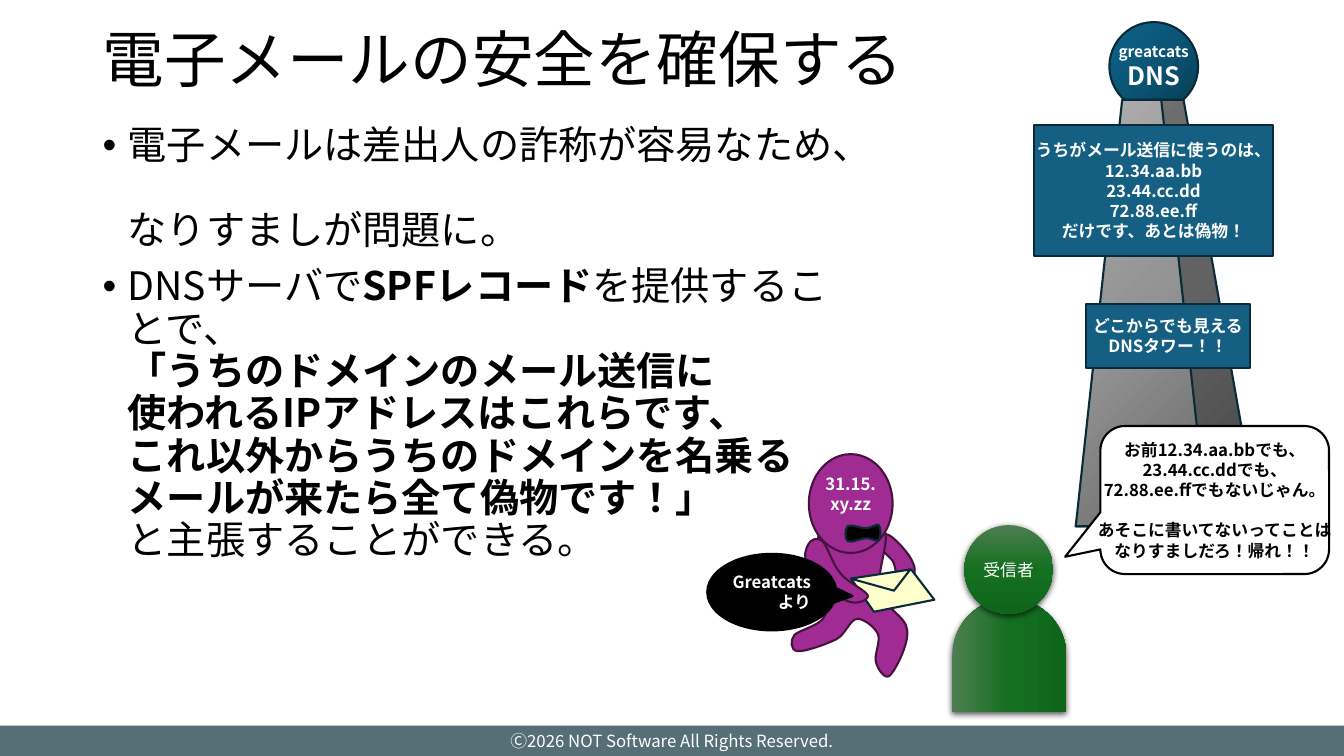
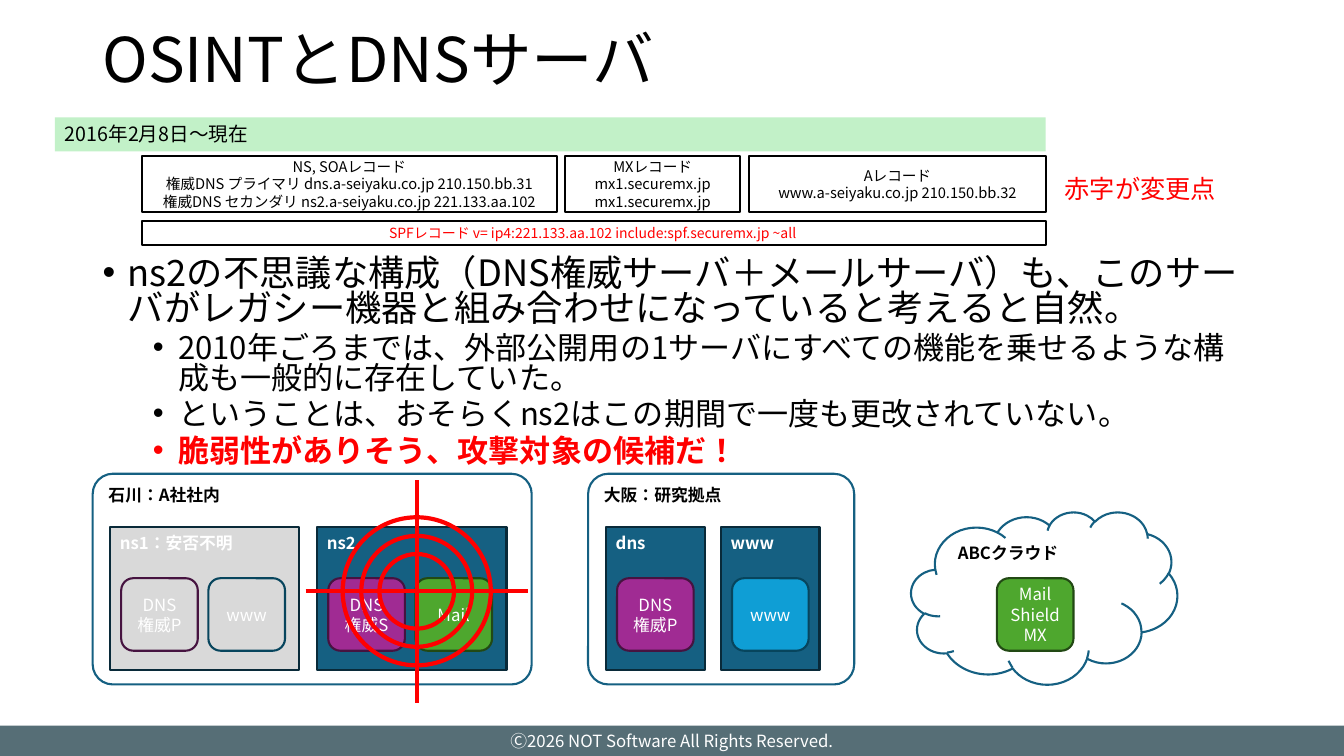
from copy import deepcopy
from dataclasses import dataclass
from lxml.etree import SubElement
from pptx import Presentation
from pptx.dml.color import RGBColor
from pptx.enum.lang import MSO_LANGUAGE_ID
from pptx.enum.shapes import MSO_CONNECTOR, MSO_SHAPE
from pptx.enum.text import MSO_ANCHOR, PP_ALIGN
from pptx.oxml.ns import qn
from pptx.util import Pt


@dataclass(frozen=True)
class Theme:
    font: str = "Noto Sans CJK JP"
    black: str = "000000"
    white: str = "FFFFFF"
    red: str = "FF0000"
    blue: str = "156082"
    navy: str = "092A39"
    purple: str = "A02B93"
    plum: str = "461340"
    green: str = "4EA72E"
    forest: str = "224914"
    sky: str = "0F9ED5"
    teal: str = "07455D"
    gray: str = "D9D9D9"
    cream: str = "FFFFCC"
    mint: str = "C2F1C8"
    band: str = "566E76"
    ball: tuple = (225, "083B52", "0B5474", "0D638A")
    tower_side: tuple = (225, "454545", "626262", "747474")
    tower_front: tuple = (225, "676767", "939393", "AEAEAE")
    receiver: tuple = (90, "4D7E50", "156F21", "0F661B")
    title: float = 44
    body: float = 28
    dense_body: tuple = (25.9, 22.2)
    note: float = 18
    period: float = 14
    label: float = 12
    small: float = 11
    record: float = 10.5
    spf: float = 10
    line: float = 1.5
    thick: float = 3


T = Theme()
LEFT, CENTER, RIGHT = PP_ALIGN.LEFT, PP_ALIGN.CENTER, PP_ALIGN.RIGHT
TOP, MIDDLE = MSO_ANCHOR.TOP, MSO_ANCHOR.MIDDLE
FOOTER = "Ⓒ2026 NOT Software All Rights Reserved."

MAIL_TITLE = "電子メールの安全を確保する"
MAIL_BODY = [
    (0, [("電子メールは差出人の詐称が容易なため、\nなりすましが問題に。", False, T.black)]),
    (0, [("DNSサーバで", False, T.black), ("SPFレコード", True, T.black),
         ("を提供することで、\n", False, T.black),
         ("「うちのドメインのメール送信に\n使われるIPアドレスはこれらです、\n"
          "これ以外からうちのドメインを名乗る\nメールが来たら全て偽物です！」\n", True, T.black),
         ("と主張することができる。", False, T.black)]),
]
TOWER_SIGNS = [
    ((738.7, 89.3, 170.6, 93.6),
     ["うちがメール送信に使うのは、", "12.34.aa.bb", "23.44.cc.dd", "72.88.ee.ff", "だけです、あとは偽物！"]),
    ((775.6, 217.4, 117.4, 45.4), ["どこからでも見える", "DNSタワー！！"]),
]
SPEECH = ["お前12.34.aa.bbでも、", "23.44.cc.ddでも、", "72.88.ee.ffでもないじゃん。",
          "あそこに書いてないってことは", "なりすましだろ！帰れ！！"]

FAR_ARM = [
    (635, 382.3), (639.4, 384.5), (650.2, 396), (652.3, 402.5), (655.2, 408.2), (651.6, 415.4),
    (649.4, 416.9), (648, 419), (643, 415.4), (641.5, 412.6), (639.4, 410.4), (640.1, 405.4),
    (637.9, 401), (635, 396.7), (626.4, 391), (625.7, 387.4), (625.7, 384.5), (630, 379.4),
    (635, 382.3)]
TORSO = [
    (585.4, 378), (586.1, 374.4), (586.8, 378), (586.8, 378), (591.1, 377.3), (603.4, 372.2),
    (610.6, 373), (617.8, 373), (629.3, 371.5), (632.2, 380.2), (635, 388.1), (625.7, 410.4),
    (628.6, 421.9), (630.7, 434.2), (647.3, 439.9), (648, 450), (649.4, 460.1), (639.4, 478.8),
    (635.8, 482.4), (632.2, 486), (627.1, 478.1), (625.7, 473), (624.2, 468), (629.3, 457.9),
    (627.1, 452.9), (625, 447.8), (616.3, 441.4), (612, 442.1), (607, 442.8), (604.1, 452.9),
    (597.6, 456.5), (590.4, 460.1), (574.6, 465.8), (569.5, 465.1), (564.5, 464.4), (564.5, 457.2),
    (567.4, 453.6), (571, 450), (584.6, 447.1), (588.2, 441.4), (591.8, 436.3), (590.4, 427),
    (589.7, 419.8), (589, 412.6), (584.6, 406.1), (583.9, 398.9), (583.2, 391.7), (584.6, 381.6),
    (585.4, 378)]
BOW_TIE = [
    (627.8, 375.1), (629.3, 377.3), (629.3, 384.5), (627.8, 385.9), (625.7, 387.4), (622.1, 383.8),
    (618.5, 384.5), (614.9, 384.5), (607.7, 388.1), (605.5, 386.6), (603.4, 385.2), (603.4, 378),
    (605.5, 375.8), (607.7, 374.4), (614.9, 377.3), (618.5, 377.3), (622.8, 377.3), (626.4, 373.7),
    (627.8, 375.1)]
NEAR_ARM = [
    (577.4, 388.8), (578.9, 385.9), (583.2, 383), (587.5, 386.6), (591.1, 390.2), (594.7, 403.2),
    (600.5, 409.7), (605.5, 416.2), (619.2, 421.9), (619.9, 425.5), (620.6, 428.4), (612, 432.7),
    (604.8, 429.1), (597.6, 425.5), (582.5, 410.4), (577.4, 403.9), (573.1, 396.7), (576, 391.7),
    (577.4, 388.8)]
ENVELOPE = [(608.4, 414), (650.9, 406.8), (667.4, 428.4), (624.2, 437)]
FLAP = [(607.7, 413.3), (650.2, 406.8), (638.6, 421.9)]

OSINT_TITLE = "OSINTとDNSサーバ"
OSINT_BODY = [
    (0, [("ns2の不思議な構成（DNS権威サーバ＋メールサーバ）も、このサーバがレガシー機器と"
          "組み合わせになっていると考えると自然。", False, T.black)]),
    (1, [("2010年ごろまでは、外部公開用の1サーバにすべての機能を乗せるような構成も"
          "一般的に存在していた。", False, T.black)]),
    (1, [("ということは、おそらくns2はこの期間で一度も更改されていない。", False, T.black)]),
    (1, [("脆弱性がありそう、攻撃対象の候補だ！", True, T.red)]),
]
RECORDS = [
    (296.1, ["NS, SOAレコード", "権威DNS プライマリ dns.a-seiyaku.co.jp 210.150.bb.31",
             "権威DNS セカンダリ ns2.a-seiyaku.co.jp 221.133.aa.102"]),
    (125.3, ["MXレコード", "mx1.securemx.jp", "mx1.securemx.jp"]),
    (212.4, ["Aレコード", "www.a-seiyaku.co.jp 210.150.bb.32"]),
]
SPF = "SPFレコード v= ip4:221.133.aa.102 include:spf.securemx.jp ~all "
SITES = [(66.2, 313.6, "石川：A社社内"), (420.1, 190.1, "大阪：研究拠点")]
SERVERS = [
    (78.5, "ns1：安否不明", T.gray, [(["DNS", "権威P"], T.gray, T.plum), (["www"], T.gray, T.teal)]),
    (226.4, "ns2", T.blue, [(["DNS", "権威S"], T.purple, T.plum), (["Mail"], T.green, T.forest)]),
    (432.7, "dns", T.blue, [(["DNS", "権威P"], T.purple, T.plum)]),
    (514.8, "www", T.blue, [(["www"], T.sky, T.teal)]),
]
TARGET = (297.7, 422.4)
RING_SIZES = (105.8, 79.2, 53.3)
CROSS_ARM = 79.4


def rgb(value):
    return RGBColor.from_string(value)


def add_run(p, text, size, color, bold=False):
    r = p.add_run()
    r.text = text
    f = r.font
    f.name, f.size, f.bold = T.font, Pt(size), bold
    f.color.rgb = rgb(color)
    f.language_id = MSO_LANGUAGE_ID.JAPANESE
    SubElement(r._r.rPr, qn("a:ea"), typeface=T.font)
    return r


def add_lines(sp, lines, size=T.label, color=T.white, bold=False, align=CENTER, anchor=MIDDLE, wrap=False):
    tf = sp.text_frame
    tf.word_wrap, tf.vertical_anchor = wrap, anchor
    for i, text in enumerate(lines):
        p = tf.paragraphs[0] if i == 0 else tf.add_paragraph()
        p.alignment = align
        add_run(p, text, size, color, bold)
    return tf


def paint(sp, fill=None, line=None, width=T.line):
    sp.shadow.inherit = False
    if isinstance(fill, tuple):
        sp.fill.gradient()
        sp.fill.gradient_angle = 360 - fill[0]
        stops = sp._element.spPr.find(qn("a:gradFill")).find(qn("a:gsLst"))
        for stop in list(stops):
            stops.remove(stop)
        for i, color in enumerate(fill[1:]):
            stop = SubElement(stops, qn("a:gs"), pos=str(i * 50000))
            SubElement(stop, qn("a:srgbClr"), val=color)
    elif fill:
        sp.fill.solid()
        sp.fill.fore_color.rgb = rgb(fill)
    else:
        sp.fill.background()
    if line:
        sp.line.color.rgb = rgb(line)
        sp.line.width = Pt(width)
    else:
        sp.line.fill.background()
    return sp


def add_box(s, kind, box, fill=None, line=None, width=T.line, adj=()):
    sp = s.shapes.add_shape(kind, *map(Pt, box))
    for i, value in enumerate(adj):
        sp.adjustments[i] = value
    return paint(sp, fill, line, width)


def add_outline(s, points, fill, line):
    fb = s.shapes.build_freeform(Pt(points[0][0]), Pt(points[0][1]))
    fb.add_line_segments([(Pt(x), Pt(y)) for x, y in points[1:]], close=points[0] != points[-1])
    return paint(fb.convert_to_shape(), fill, line)


def add_curve(s, points, fill, line):
    sp = add_outline(s, points, fill, line)
    segments = list(sp._element.spPr.iter(qn("a:lnTo")))
    outline = segments[0].getparent()
    for i in range(0, len(segments), 3):
        curve = SubElement(outline, qn("a:cubicBezTo"))
        for segment in segments[i:i + 3]:
            curve.append(segment[0])
            outline.remove(segment)
    SubElement(outline, qn("a:close"))
    return sp


def add_shadow(sp):
    effects = sp._element.spPr.find(qn("a:effectLst"))
    shadow = SubElement(effects, qn("a:outerShdw"), blurRad=str(Pt(4.5)), dist=str(Pt(1.5)),
                        dir="5400000", algn="ctr", rotWithShape="0")
    color = SubElement(shadow, qn("a:srgbClr"), val=T.black)
    SubElement(color, qn("a:alpha"), val="63000")


def add_body(s, box, items, sizes, spacing):
    tf = s.shapes.add_textbox(*map(Pt, box)).text_frame
    tf.word_wrap = True
    for i, (level, runs) in enumerate(items):
        p = tf.paragraphs[0] if i == 0 else tf.add_paragraph()
        pPr = p._p.get_or_add_pPr()
        for name, value in (("marL", Pt(18 + 36 * level)), ("indent", -Pt(18)), ("hangingPunct", 1)):
            pPr.set(name, str(value))
        SubElement(pPr, qn("a:buFont"), typeface="Arial")
        SubElement(pPr, qn("a:buChar"), char="•")
        p.level = level
        p.line_spacing = spacing
        p.space_before = Pt(0 if i == 0 else 5 if level else 10)
        for text, bold, color in runs:
            for n, part in enumerate(text.split("\n")):
                if n:
                    p.add_line_break()
                    p._p[-1].append(deepcopy(r._r.rPr))
                if part:
                    r = add_run(p, part, sizes[level], color, bold)


def new_slide(prs, title):
    s = prs.slides.add_slide(prs.slide_layouts[6])
    add_lines(add_box(s, MSO_SHAPE.RECTANGLE, (0, 518.4, 960, 21.6), T.band), [FOOTER])
    sp = s.shapes.add_textbox(Pt(66.2), Pt(15.8), Pt(828), Pt(57.6))
    tf = add_lines(sp, [title], T.title, T.black, align=LEFT, wrap=True)
    tf.paragraphs[0].line_spacing = 0.9
    return s


def add_impostor(s):
    parts = [add_curve(s, points, T.purple, T.plum) for points in (FAR_ARM, TORSO)]
    head = add_box(s, MSO_SHAPE.OVAL, (577.8, 324.4, 59.8, 70.6), T.purple, T.plum)
    add_lines(head, ["31.15.", "xy.zz"], bold=True).margin_bottom = Pt(18)
    parts += [head, add_curve(s, BOW_TIE, T.black, T.navy)]
    parts += [add_outline(s, points, T.cream, T.navy) for points in (ENVELOPE, FLAP)]
    parts.append(add_curve(s, NEAR_ARM, T.purple, T.plum))
    s.shapes.add_group_shape(parts)


def add_receiver(s):
    body = add_box(s, MSO_SHAPE.FLOWCHART_DELAY, (680.2, 427.4, 81.4, 81.4), T.receiver)
    body.rotation = 270
    head = add_box(s, MSO_SHAPE.OVAL, (688.8, 375.1, 63.4, 63.4), T.receiver)
    add_lines(head, ["受信者"])
    for sp in (body, head):
        add_shadow(sp)
    s.shapes.add_group_shape([body, head])


def build_mail(prs):
    s = new_slide(prs, MAIL_TITLE)
    ball = add_box(s, MSO_SHAPE.OVAL, (792.4, 15.8, 63.4, 63.4), T.ball, T.navy)
    tf = add_lines(ball, ["greatcats", "DNS"], T.small, bold=True)
    tf.paragraphs[1].runs[0].font.size = Pt(T.note)
    tower = [add_box(s, MSO_SHAPE.TRAPEZOID, (768.4, 71.3, 131, 304.6), T.tower_side, T.navy, adj=(0.412,))]
    add_body(s, (66.2, 86.4, 540.7, 400.3), MAIL_BODY, (T.body,), 0.9)
    add_box(s, MSO_SHAPE.TRAPEZOID, (768.4, 71.3, 94.3, 304.6), T.tower_front, T.navy, adj=(0.352,))
    add_impostor(s)
    sign, lines = TOWER_SIGNS[0]
    for sign, lines in TOWER_SIGNS:
        add_lines(add_box(s, MSO_SHAPE.RECTANGLE, sign, T.blue, T.navy), lines, bold=True)
    sender = add_box(s, MSO_SHAPE.OVAL_CALLOUT, (505.2, 395.6, 92.2, 54.7), T.black, T.black, adj=(0.625, 0.052))
    add_lines(sender, ["Greatcats", "より"], bold=True).paragraphs[1].alignment = RIGHT
    add_receiver(s)
    speech = add_box(s, MSO_SHAPE.ROUNDED_RECTANGULAR_CALLOUT, (786, 304.3, 163.4, 105.8),
                     T.white, T.black, adj=(-0.654, 0.383, 0.167))
    add_lines(speech, SPEECH, color=T.black, bold=True).paragraphs[3].space_before = Pt(14.3)


def add_service(s, x, lines, fill, line):
    add_lines(add_box(s, MSO_SHAPE.ROUNDED_RECTANGLE, (x, 413, 54.7, 51.8), fill, line), lines)


def add_target(s):
    cx, cy = TARGET
    parts = [add_box(s, MSO_SHAPE.OVAL, (cx - d / 2, cy - d / 2, d, d), line=T.red, width=T.thick)
             for d in RING_SIZES]
    for dx, dy in ((0, CROSS_ARM), (CROSS_ARM, 0)):
        ends = map(Pt, (cx - dx, cy - dy, cx + dx, cy + dy))
        c = s.shapes.add_connector(MSO_CONNECTOR.STRAIGHT, *ends)
        c.line.color.rgb = rgb(T.red)
        c.line.width = Pt(T.thick)
        SubElement(c._element.spPr, qn("a:effectLst"))
        parts.append(c)
    s.shapes.add_group_shape(parts)


def build_osint(prs):
    s = new_slide(prs, OSINT_TITLE)
    heading = dict(bold=True, align=LEFT, anchor=TOP)
    cloud = add_box(s, MSO_SHAPE.CLOUD, (650.9, 365.6, 190.1, 123.1), T.white, T.blue)
    add_lines(cloud, ["ABCクラウド"], color=T.black, **heading)
    x = 101.5
    for width, lines in RECORDS:
        record = add_box(s, MSO_SHAPE.RECTANGLE, (x, 111.6, width, 39.6), T.white, T.black)
        add_lines(record, lines, T.record, T.black)
        x += width + 6
    period = add_box(s, MSO_SHAPE.RECTANGLE, (39.2, 83.9, 707.8, 24.2), T.mint)
    add_lines(period, ["2016年2月8日～現在"], T.period, T.black, align=LEFT, anchor=TOP, wrap=True)
    add_body(s, (66.2, 181.2, 828, 157.7), OSINT_BODY, T.dense_body, 0.8)
    note = s.shapes.add_textbox(Pt(753.4), Pt(120.2), Pt(144), Pt(28.8))
    add_lines(note, ["赤字が変更点"], T.note, T.red, align=LEFT, anchor=TOP, wrap=True)
    for x, width, name in SITES:
        site = add_box(s, MSO_SHAPE.ROUNDED_RECTANGLE, (x, 338.4, width, 150.5), T.white, T.blue, adj=(0.096,))
        add_lines(site, [name], color=T.black, **heading)
    for x, name, fill, services in SERVERS:
        width = 70.6 + 64.8 * (len(services) - 1)
        add_lines(add_box(s, MSO_SHAPE.RECTANGLE, (x, 376.6, width, 102.2), fill, T.navy), [name], **heading)
        for i, service in enumerate(services):
            add_service(s, x + 8.1 + 62.3 * i, *service)
    add_service(s, 712.1, ["Mail", "Shield", "MX"], T.green, T.forest)
    spf = add_box(s, MSO_SHAPE.RECTANGLE, (101.5, 157.7, 645.8, 17.3), T.white, T.black)
    add_lines(spf, [SPF], T.spf, T.red)
    add_target(s)


def main():
    prs = Presentation()
    prs.slide_width, prs.slide_height = Pt(960), Pt(540)
    build_mail(prs)
    build_osint(prs)
    prs.save("out.pptx")


if __name__ == "__main__":
    main()
